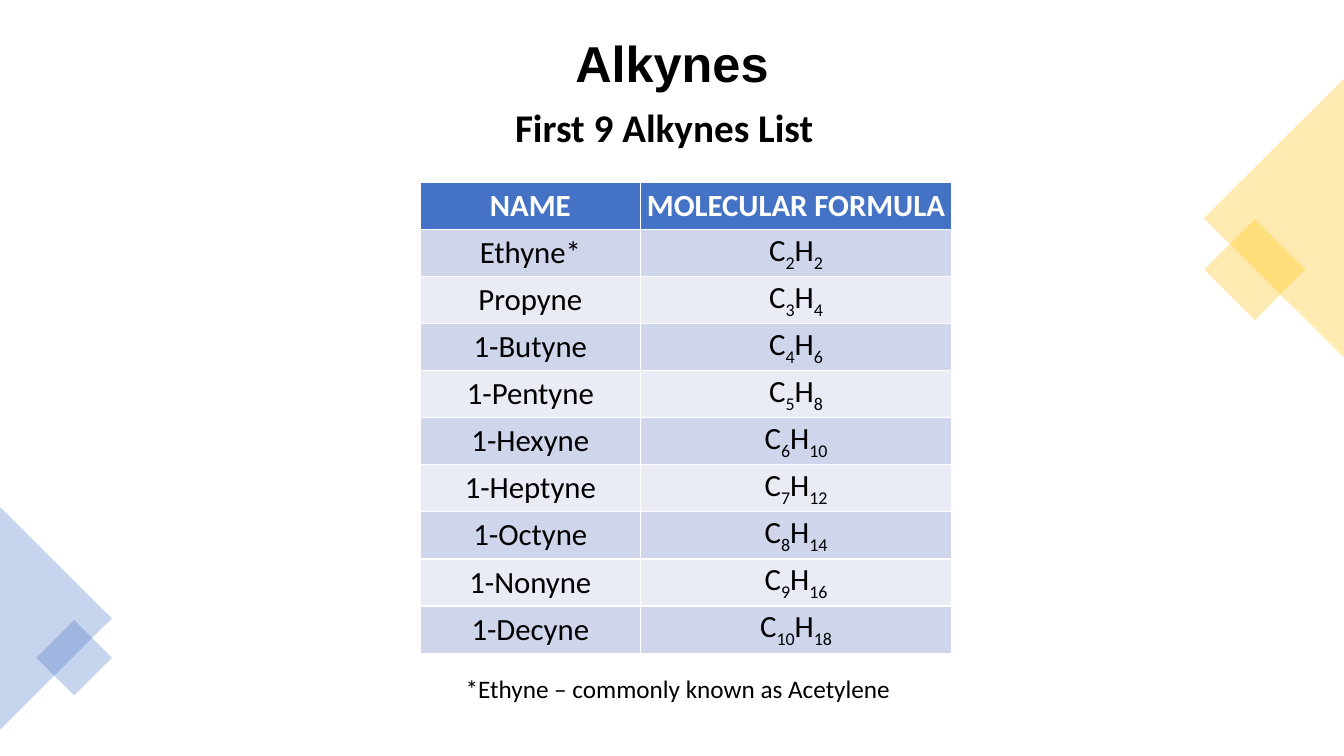
from dataclasses import dataclass

from pptx import Presentation
from pptx.dml.color import RGBColor
from pptx.enum.shapes import MSO_SHAPE as Preset
from pptx.enum.text import MSO_ANCHOR as Anchor, MSO_AUTO_SIZE as AutoSize, PP_ALIGN as Align
from pptx.oxml.ns import qn
from pptx.oxml.xmlchemy import OxmlElement
from pptx.slide import Slide
from pptx.table import _Cell as Cell
from pptx.text.text import _Paragraph as Paragraph
from pptx.util import Inches, Pt

BLACK, WHITE, BLUE, GOLD = "000000", "FFFFFF", "4472C4", "FFC000"
BANDS = ("CFD5EA", "E9EBF5")
OPACITY = 30
SUBSCRIPT = -25

TITLE_FORMAT = {"name": "Arial", "size": Pt(36), "bold": True}
SUBTITLE_FORMAT = {"name": "Calibri", "size": Pt(28), "bold": True}
NOTE_FORMAT = {"name": "Calibri", "size": Pt(18), "bold": False}
HEADER_FORMAT = {"name": "Calibri", "size": Pt(22), "bold": True}
BODY_FORMAT = HEADER_FORMAT | {"bold": False}


@dataclass(frozen=True)
class Box:
    left: float
    top: float
    width: float
    height: float

    def lengths(self) -> list[Inches]:
        return [Inches(value) for value in (self.left, self.top, self.width, self.height)]


@dataclass(frozen=True)
class Ornament:
    preset: Preset
    box: Box
    rotation: float
    color: str


@dataclass(frozen=True)
class Caption:
    text: str
    box: Box
    format: dict


ORNAMENTS = (
    Ornament(Preset.RECTANGLE, Box(12.09, 2.32, 0.71, 0.71), 45, GOLD),
    Ornament(Preset.ISOSCELES_TRIANGLE, Box(11.25, 1.47, 2.77, 1.39), 270, GOLD),
    Ornament(Preset.ISOSCELES_TRIANGLE, Box(-0.55, 5.58, 2.21, 1.11), 90, BLUE),
    Ornament(Preset.RECTANGLE, Box(0.47, 6.26, 0.53, 0.53), 45, BLUE),
)
CAPTIONS = (
    Caption("*Ethyne – commonly known as Acetylene", Box(4.52, 6.63, 5.07, 0.4), NOTE_FORMAT),
    Caption("First 9 Alkynes List", Box(5.01, 0.98, 6.67, 0.57), SUBTITLE_FORMAT),
)
TITLE_BOX = Box(0.7, 0.26, 11.93, 0.79)
TABLE_BOX = Box(4.17, 1.81, 5.27, 4.67)
COLUMN_WIDTHS = (2.18, 3.09)
HEADERS = ("NAME", "MOLECULAR FORMULA")
ALKYNES = ("Ethyne*", "Propyne", "1-Butyne", "1-Pentyne", "1-Hexyne",
           "1-Heptyne", "1-Octyne", "1-Nonyne", "1-Decyne")


def rgb(color: str) -> RGBColor:
    return RGBColor.from_string(color)


def add_run(paragraph: Paragraph, text: str, format: dict,
            color: str = BLACK, baseline: int = 0) -> None:
    run = paragraph.add_run()
    run.text = text
    for attribute, value in format.items():
        setattr(run.font, attribute, value)
    run.font.color.rgb = rgb(color)
    if baseline:
        run.font._element.set("baseline", str(baseline * 1000))


def add_title(slide: Slide) -> None:
    title = slide.shapes.title
    title.left, title.top, title.width, title.height = TITLE_BOX.lengths()
    title.text_frame.vertical_anchor = Anchor.MIDDLE
    paragraph = title.text_frame.paragraphs[0]
    paragraph.alignment = Align.CENTER
    paragraph.line_spacing = 0.9
    add_run(paragraph, "Alkynes", TITLE_FORMAT)


def add_ornament(slide: Slide, ornament: Ornament) -> None:
    shape = slide.shapes.add_shape(ornament.preset, *ornament.box.lengths())
    shape.rotation = ornament.rotation
    shape.shadow.inherit = False
    shape.line.fill.background()
    shape.fill.solid()
    shape.fill.fore_color.rgb = rgb(ornament.color)
    alpha = OxmlElement("a:alpha")
    alpha.set("val", str(OPACITY * 1000))
    shape._element.spPr.find(qn("a:solidFill"))[0].append(alpha)


def add_caption(slide: Slide, caption: Caption) -> None:
    frame = slide.shapes.add_textbox(*caption.box.lengths()).text_frame
    frame.word_wrap = True
    frame.auto_size = AutoSize.SHAPE_TO_FIT_TEXT
    add_run(frame.paragraphs[0], caption.text, caption.format)


def prepare_cell(cell: Cell, fill: str) -> Paragraph:
    """Format the cell and return its empty centred paragraph."""
    cell.fill.solid()
    cell.fill.fore_color.rgb = rgb(fill)
    cell.vertical_anchor = Anchor.MIDDLE
    for side in ("left", "top", "right", "bottom"):
        setattr(cell, f"margin_{side}", 0)
    paragraph = cell.text_frame.paragraphs[0]
    paragraph.alignment = Align.CENTER
    return paragraph


def add_formula(paragraph: Paragraph, carbons: int) -> None:
    """Write the alkyne formula, which has 2n - 2 hydrogens for n carbons."""
    for element, count in (("C", carbons), ("H", 2 * carbons - 2)):
        add_run(paragraph, element, BODY_FORMAT)
        add_run(paragraph, str(count), BODY_FORMAT, baseline=SUBSCRIPT)


def add_alkyne_table(slide: Slide) -> None:
    table = slide.shapes.add_table(len(ALKYNES) + 1, len(HEADERS), *TABLE_BOX.lengths()).table
    for column, width in zip(table.columns, COLUMN_WIDTHS):
        column.width = Inches(width)
    for index, header in enumerate(HEADERS):
        add_run(prepare_cell(table.cell(0, index), BLUE), header, HEADER_FORMAT, WHITE)
    for row, name in enumerate(ALKYNES, start=1):
        band = BANDS[(row - 1) % 2]
        add_run(prepare_cell(table.cell(row, 0), band), name, BODY_FORMAT)
        add_formula(prepare_cell(table.cell(row, 1), band), carbons=row + 1)


def main() -> None:
    presentation = Presentation()
    presentation.slide_width, presentation.slide_height = Inches(13.33), Inches(7.5)
    slide = presentation.slides.add_slide(presentation.slide_layouts.get_by_name("Title Only"))
    add_title(slide)
    for ornament in ORNAMENTS:
        add_ornament(slide, ornament)
    add_alkyne_table(slide)
    for caption in CAPTIONS:
        add_caption(slide, caption)
    presentation.save("out.pptx")


if __name__ == "__main__":
    main()
